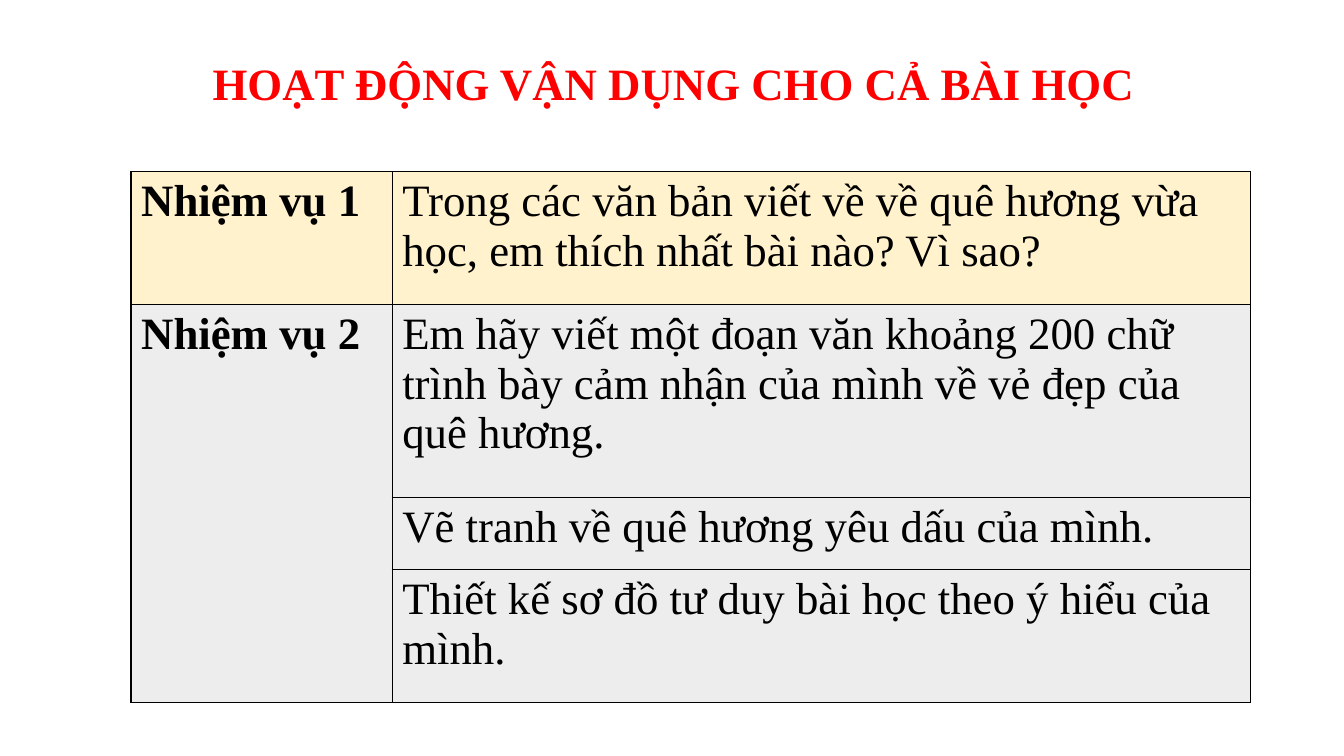
from lxml.etree import SubElement
from pptx import Presentation
from pptx.dml.color import RGBColor
from pptx.enum.text import MSO_ANCHOR, PP_ALIGN
from pptx.oxml.ns import qn
from pptx.util import Inches, Pt

TITLE = "HOẠT ĐỘNG VẬN DỤNG CHO CẢ BÀI HỌC"
TASKS = [
    ("Nhiệm vụ 1", "FFF2CC", [
        ("Trong các văn bản viết về về quê hương vừa học, em thích nhất bài nào? Vì sao?", 1.32),
    ]),
    ("Nhiệm vụ 2", "EDEDED", [
        ("Em hãy viết một đoạn văn khoảng 200 chữ trình bày cảm nhận của mình về vẻ đẹp của quê hương.", 1.92),
        ("Vẽ tranh về quê hương yêu dấu của mình.", 0.71),
        ("Thiết kế sơ đồ tư duy bài học theo ý hiểu của mình.", 1.32),
    ]),
]
COLUMN_WIDTHS = [2.59, 8.51]
FONT = "Times New Roman"


def color(value):
    return RGBColor.from_string(value)


def add_text(para, text, hue, bold):
    span = para.add_run()
    span.text = text
    span.font.name = FONT
    span.font.size = Pt(32)
    span.font.bold = bold
    span.font.color.rgb = color(hue)


def style_cell(cell, fill):
    properties = cell._tc.get_or_add_tcPr()
    for side in ("a:lnL", "a:lnR", "a:lnT", "a:lnB"):
        line = SubElement(properties, qn(side), w=str(Pt(1)))
        solid = SubElement(line, qn("a:solidFill"))
        SubElement(solid, qn("a:srgbClr"), val="000000")
    cell.fill.solid()
    cell.fill.fore_color.rgb = color(fill)


def add_title(page):
    box = page.shapes.title
    box.left, box.top = Inches(1.89), Inches(0.4)
    box.width, box.height = Inches(9.58), Inches(0.84)
    frame = box.text_frame
    frame.word_wrap = False
    frame.vertical_anchor = MSO_ANCHOR.MIDDLE
    para = frame.paragraphs[0]
    para.alignment = PP_ALIGN.CENTER
    add_text(para, TITLE, "FF0000", True)


def add_tasks(page):
    heights = [height for _, _, details in TASKS for _, height in details]
    table = page.shapes.add_table(
        len(heights), len(COLUMN_WIDTHS), Inches(1.3), Inches(1.7),
        Inches(sum(COLUMN_WIDTHS)), Inches(sum(heights))).table
    for column, width in zip(table.columns, COLUMN_WIDTHS):
        column.width = Inches(width)
    for row, height in zip(table.rows, heights):
        row.height = Inches(height)

    first = 0
    for name, fill, details in TASKS:
        for index, (detail, _) in enumerate(details, first):
            for cell in table.rows[index].cells:
                style_cell(cell, fill)
            add_text(table.cell(index, 1).text_frame.paragraphs[0], detail, "000000", False)
        label = table.cell(first, 0)
        add_text(label.text_frame.paragraphs[0], name, "000000", True)
        if len(details) > 1:
            label.merge(table.cell(first + len(details) - 1, 0))
        first += len(details)


def main():
    deck = Presentation()
    deck.slide_width, deck.slide_height = Inches(13.33), Inches(7.5)
    page = deck.slides.add_slide(deck.slide_layouts[5])
    add_title(page)
    add_tasks(page)
    deck.save("out.pptx")


if __name__ == "__main__":
    main()
